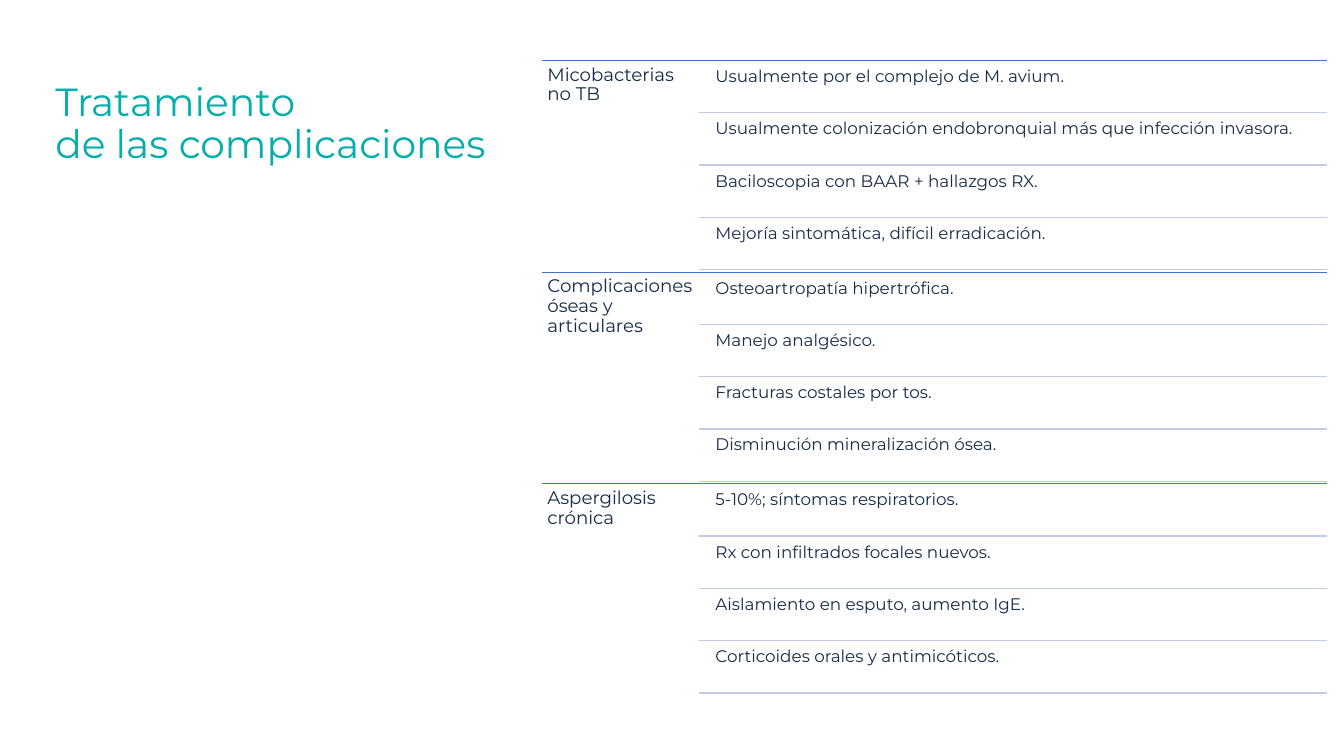
import pptx
import pptx.util
import pptx.dml.color
import pptx.enum.shapes
import pptx.enum.text
import pptx.oxml.ns
from lxml import etree

TITLE = "Tratamiento\vde las complicaciones"
COMPLICATIONS = {
    "Micobacterias no TB": [
        "Usualmente por el complejo de M. avium.",
        "Usualmente colonización endobronquial más que infección invasora.",
        "Baciloscopia con BAAR + hallazgos RX.",
        "Mejoría sintomática, difícil erradicación.",
    ],
    "Complicaciones óseas y articulares": [
        "Osteoartropatía hipertrófica.",
        "Manejo analgésico.",
        "Fracturas costales por tos.",
        "Disminución mineralización ósea.",
    ],
    "Aspergilosis crónica": [
        "5-10%; síntomas respiratorios.",
        "Rx con infiltrados focales nuevos.",
        "Aislamiento en esputo, aumento IgE.",
        "Corticoides orales y antimicóticos.",
    ],
}

THEME = {
    "font": "Montserrat",
    "title": {"size": 28, "color": "06AEAA"},
    "topic": {"size": 13, "color": "152B48"},
    "detail": {"size": 12, "color": "152B48"},
    "topic_rule": {"width": 0.5, "color": "4472C4"},
    "detail_rule": {"width": 1, "color": "C1C9E4"},
}

SLIDE_W, SLIDE_H = 13.33, 7.5
TABLE_LEFT, TABLE_RIGHT = 5.38, 13.16
TABLE_TOP = SLIDE_H * 0.08
TOPIC_H = SLIDE_H * 0.28
TOPIC_W = (TABLE_RIGHT - TABLE_LEFT) / 5
DETAIL_LEFT = TABLE_LEFT + TOPIC_W
DETAIL_INDENT = 0.11
ROW_GAP = TOPIC_H / 84
DETAIL_H = (TOPIC_H - 5 * ROW_GAP) / 4
ROW_PITCH = DETAIL_H + ROW_GAP

Inches = pptx.util.Inches
Pt = pptx.util.Pt
rgb = pptx.dml.color.RGBColor.from_string
anchors = pptx.enum.text.MSO_ANCHOR


def add_text(slide, wording, box, role, anchor=anchors.TOP, inset=(0.05, 0.05), after=0):
    frame = slide.shapes.add_textbox(*map(Inches, box)).text_frame
    side, end = map(Inches, inset)
    frame_format = {
        "word_wrap": True, "vertical_anchor": anchor,
        "margin_left": side, "margin_right": side,
        "margin_top": end, "margin_bottom": end,
    }
    for key, setting in frame_format.items():
        setattr(frame, key, setting)
    line = frame.paragraphs[0]
    line.text = wording
    line.line_spacing = 0.9
    line.space_after = Pt(after)
    for run in line.runs:
        run.font.name = THEME["font"]
        run.font.size = Pt(THEME[role]["size"])
        run.font.color.rgb = rgb(THEME[role]["color"])


def add_rule(slide, left, y, role):
    rule = slide.shapes.add_connector(
        pptx.enum.shapes.MSO_CONNECTOR.STRAIGHT,
        Inches(left), Inches(y), Inches(TABLE_RIGHT), Inches(y))
    rule.line.width = Pt(THEME[role]["width"])
    rule.line.color.rgb = rgb(THEME[role]["color"])
    etree.SubElement(rule._element.spPr, pptx.oxml.ns.qn("a:effectLst"))


def main():
    deck = pptx.Presentation()
    deck.slide_width, deck.slide_height = Inches(SLIDE_W), Inches(SLIDE_H)
    slide = deck.slides.add_slide(deck.slide_layouts[6])

    for group, (topic, details) in enumerate(COMPLICATIONS.items()):
        top = TABLE_TOP + group * TOPIC_H
        add_rule(slide, TABLE_LEFT, top, "topic_rule")
        add_text(slide, topic, (TABLE_LEFT, top, TOPIC_W, TOPIC_H), "topic", after=4.5)
        for row, detail in enumerate(details):
            detail_top = top + ROW_GAP + row * ROW_PITCH
            left = DETAIL_LEFT + DETAIL_INDENT
            add_text(slide, detail, (left, detail_top, TABLE_RIGHT - left, DETAIL_H),
                     "detail", after=4.2)
            add_rule(slide, DETAIL_LEFT, detail_top + DETAIL_H, "detail_rule")

    add_text(slide, TITLE, (0.45, 0.09, 5.11, 2.29), "title",
             anchor=anchors.MIDDLE, inset=(0.1, 0.05))
    deck.save("out.pptx")


if __name__ == "__main__":
    main()
